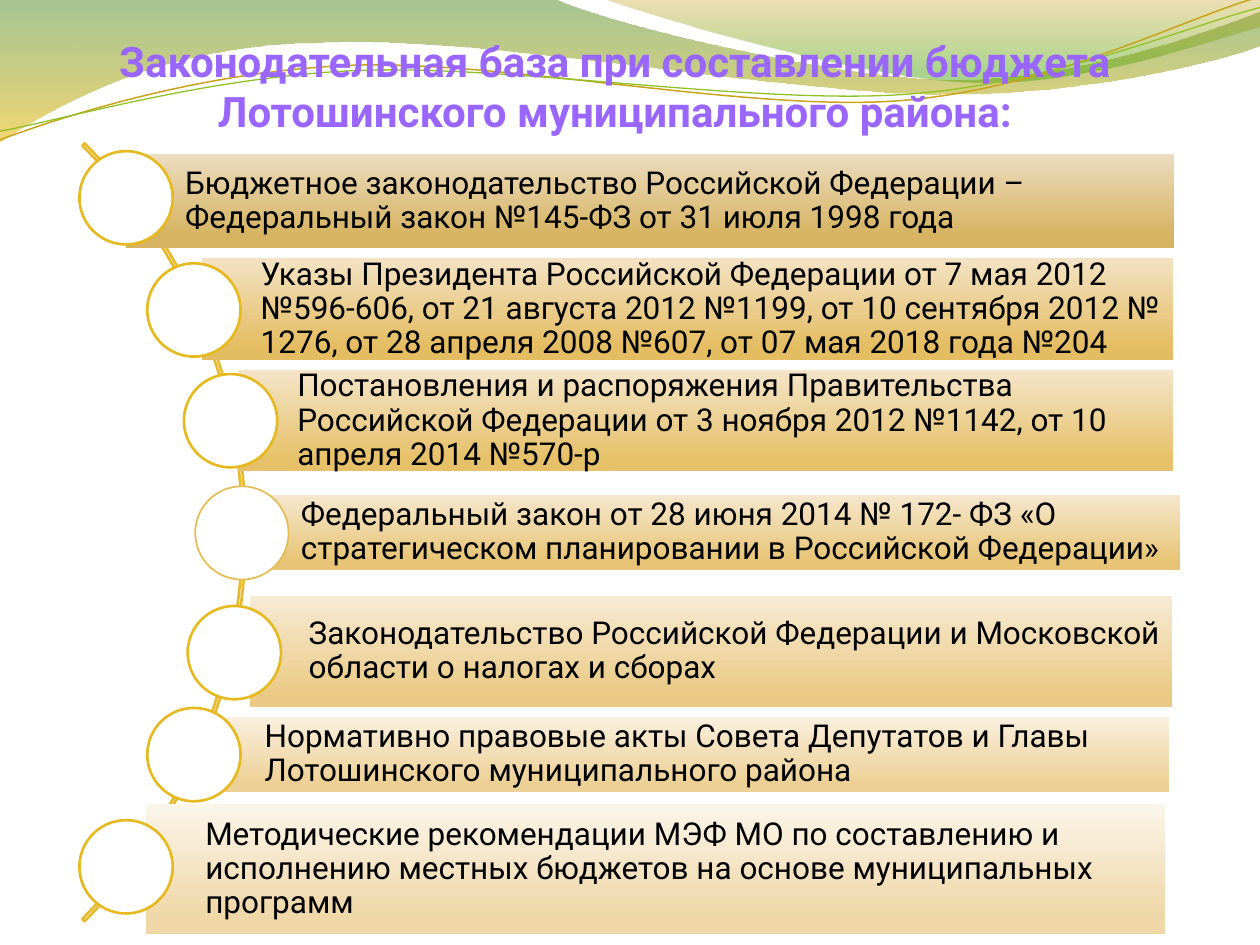
"""Builds a slide listing the legal acts behind a district budget."""
import pptx
import pptx.dml.color
import pptx.enum.shapes
import pptx.enum.text
import pptx.oxml.ns
import pptx.util
from lxml import etree

Pt = pptx.util.Pt
SHAPES = pptx.enum.shapes.MSO_SHAPE
ANCHOR = pptx.enum.text.MSO_ANCHOR
ALIGN = pptx.enum.text.PP_ALIGN
qn = pptx.oxml.ns.qn

THEME = {
    "font": "Roboto", "title_size": 24, "act_size": 18,
    "title": "9966FF", "text": "000000", "marker": "FFFFFF",
    "ring": "E6B91E", "soft_ring": "E5BD54", "arc": "E6BA2C",
    "gold_line": "CBA31A", "green_line": "90C226",
    "wave": [(0, "3C800F", 45), (100, "ECB700", 55)],
    "crest": [(0, "C09500", 30), (80, "46A407", 45)],
}
TITLE = "Законодательная база при составлении бюджета Лотошинского муниципального района:"
TITLE_BOX = (28.1, 16.6, 646.6, 56.2)
ARC_BOX = (-488.2, -10.1, 628.6, 628.6)
ARC_ADJUSTMENTS = (189, 27, 0.003)
MARKER_SIZE = 53.3
BAR_INSETS = (33.8, 3.6, 3.6, 3.6)

ACTS = [
    ("Бюджетное законодательство Российской Федерации – Федеральный закон №145-ФЗ от 31 июля 1998 года",
     (72, 87.8, 599, 54), ("ECDCC0", "D6B360"), (45.4, 86.4), ("ring", 1.5)),
    ("Указы Президента Российской Федерации от 7 мая 2012 №596-606, от 21 августа 2012 №1199, "
     "от 10 сентября 2012 № 1276, от 28 апреля 2008 №607, от 07 мая 2018 года №204",
     (115.2, 147.6, 555.1, 58.3), ("F3E2C4", "E4BD62"), (84.2, 150.5), ("ring", 1.5)),
    ("Постановления и распоряжения Правительства Российской Федерации от 3 ноября 2012 №1142, "
     "от 10 апреля 2014 №570-р",
     (136.1, 211.7, 534.2, 57.6), ("F4E4C8", "E6C16A"), (105.1, 213.8), ("ring", 1.5)),
    ("Федеральный закон от 28 июня 2014 № 172- ФЗ «О стратегическом планировании в Российской Федерации»",
     (138.2, 283, 536.4, 42.5), ("F5E7CE", "E8C576"), (111.6, 277.9), ("soft_ring", 1)),
    ("Законодательство Российской Федерации и Московской области о налогах и сборах",
     (142.6, 340.6, 527, 63.4), ("F7EBD5", "EACA85"), (107.3, 346.3), ("ring", 1.5)),
    ("Нормативно правовые акты Совета Депутатов и Главы Лотошинского муниципального района",
     (117.4, 409.7, 550.8, 43.2), ("F9F0DF", "EDD095"), (84.2, 404.6), ("ring", 1.5)),
    ("Методические рекомендации МЭФ МО по составлению и исполнению местных бюджетов "
     "на основе муниципальных программ",
     (83.5, 459.4, 582.5, 74.2), ("FBF5EA", "EFD7A7"), (45.4, 468.7), ("ring", 1.5)),
]

WAVE = [
    (0, -0.7), (316.8, -0.7),
    (342.7, 12.2, 478.1, 45.4, 545.8, 45.4), (614.2, 45.4, 689.8, 18.7, 720, 6.5),
    (720.7, 25.9), (707.8, 31.7, 626.4, 54.7, 537.1, 54),
    (447.8, 54, 275, 20.2, 185, 24.5), (92.9, 25.2, 33.1, 59.8, -0.7, 81.4),
]
CREST = [
    (344.9, -0.7), (366.5, 7.9, 491, 44.6, 553.7, 46.8),
    (616.3, 49.7, 691.9, 23, 720, 15.1), (720, 0),
]
GOLD_CURVE = [
    (0, 79.9), (34.6, 67, 113.8, 41, 199.4, 37.4),
    (284.4, 33.8, 427, 64.1, 513.4, 57.6), (599.8, 51.1, 675.4, 10.8, 718.6, -1.4),
]
GREEN_CURVE = [
    (0, 74.9), (33.8, 69.1, 118.1, 43.9, 203.8, 40.3),
    (290.2, 36.7, 429.8, 59.8, 516.2, 54), (601.9, 48.2, 677.5, 15.1, 720, 4.3),
]


def rgb(value):
    return pptx.dml.color.RGBColor.from_string(value)


def paint(shape, fill=None, line=None, width=1):
    shape.shadow.inherit = False
    if fill is None:
        shape.fill.background()
    elif isinstance(fill, str):
        shape.fill.solid()
        shape.fill.fore_color.rgb = rgb(fill)
    else:
        shape.fill.gradient()
        shape.fill.gradient_angle = 270
        for stop, (position, color, opacity) in zip(shape.fill.gradient_stops, fill):
            stop.position = position / 100
            stop.color.rgb = rgb(color)
        colors = shape._element.spPr.iter(qn("a:srgbClr"))
        for color, (_, _, opacity) in zip(colors, fill):
            if opacity < 100:
                etree.SubElement(color, qn("a:alpha")).set("val", str(opacity * 1000))
    if line:
        shape.line.color.rgb = rgb(line)
        shape.line.width = Pt(width)
    else:
        shape.line.fill.background()


def add_curve(slide, segments, closed):
    points = [(Pt(s[i]), Pt(s[i + 1])) for s in segments for i in range(0, len(s), 2)]
    builder = slide.shapes.build_freeform(*points[0], scale=1.0)
    builder.add_line_segments(points[1:], close=closed)
    shape = builder.convert_to_shape()
    steps = iter(list(shape._element.iter(qn("a:lnTo"))))
    for segment in segments[1:]:
        step = next(steps)
        if len(segment) == 6:
            step.addprevious(bezier := etree.Element(qn("a:cubicBezTo")))
            for control in (step, next(steps), next(steps)):
                bezier.append(control[0])
                control.getparent().remove(control)
    return shape


def write(shape, text, size, color, align, anchor, insets, bold=False, spacing=1.0):
    frame = shape.text_frame
    frame.word_wrap = True
    frame.vertical_anchor = anchor
    frame.margin_left, frame.margin_top, frame.margin_right, frame.margin_bottom = map(Pt, insets)
    paragraph = frame.paragraphs[0]
    paragraph.alignment = align
    paragraph.line_spacing = spacing
    run = paragraph.add_run()
    run.text = text
    run.font.name = THEME["font"]
    run.font.size = Pt(size)
    run.font.bold = bold
    run.font.color.rgb = rgb(color)


def main():
    deck = pptx.Presentation()
    deck.slide_width, deck.slide_height = Pt(720), Pt(540)
    slide = deck.slides.add_slide(deck.slide_layouts[6])
    shapes = slide.shapes

    paint(add_curve(slide, WAVE, True), THEME["wave"])
    paint(add_curve(slide, CREST, True), THEME["crest"])
    paint(add_curve(slide, GOLD_CURVE, False), line=THEME["gold_line"], width=0.85)
    paint(add_curve(slide, GREEN_CURVE, False), line=THEME["green_line"], width=0.75)

    title = shapes.add_textbox(*map(Pt, TITLE_BOX))
    write(title, TITLE, THEME["title_size"], THEME["title"], ALIGN.CENTER, ANCHOR.TOP,
          (7.2, 3.6, 7.2, 3.6), bold=True)

    arc = shapes.add_shape(SHAPES.BLOCK_ARC, *map(Pt, ARC_BOX))
    for index, value in enumerate(ARC_ADJUSTMENTS):
        arc.adjustments[index] = value
    paint(arc, line=THEME["arc"], width=1.5)

    for text, box, (light, dark), corner, (ring, width) in ACTS:
        bar = shapes.add_shape(SHAPES.RECTANGLE, *map(Pt, box))
        paint(bar, [(0, light, 100), (88, dark, 100)])
        write(bar, text, THEME["act_size"], THEME["text"], ALIGN.LEFT, ANCHOR.MIDDLE,
              BAR_INSETS, spacing=0.9)
        marker = shapes.add_shape(SHAPES.OVAL, *map(Pt, (*corner, MARKER_SIZE, MARKER_SIZE)))
        paint(marker, THEME["marker"], THEME[ring], width)

    deck.save("out.pptx")


if __name__ == "__main__":
    main()
